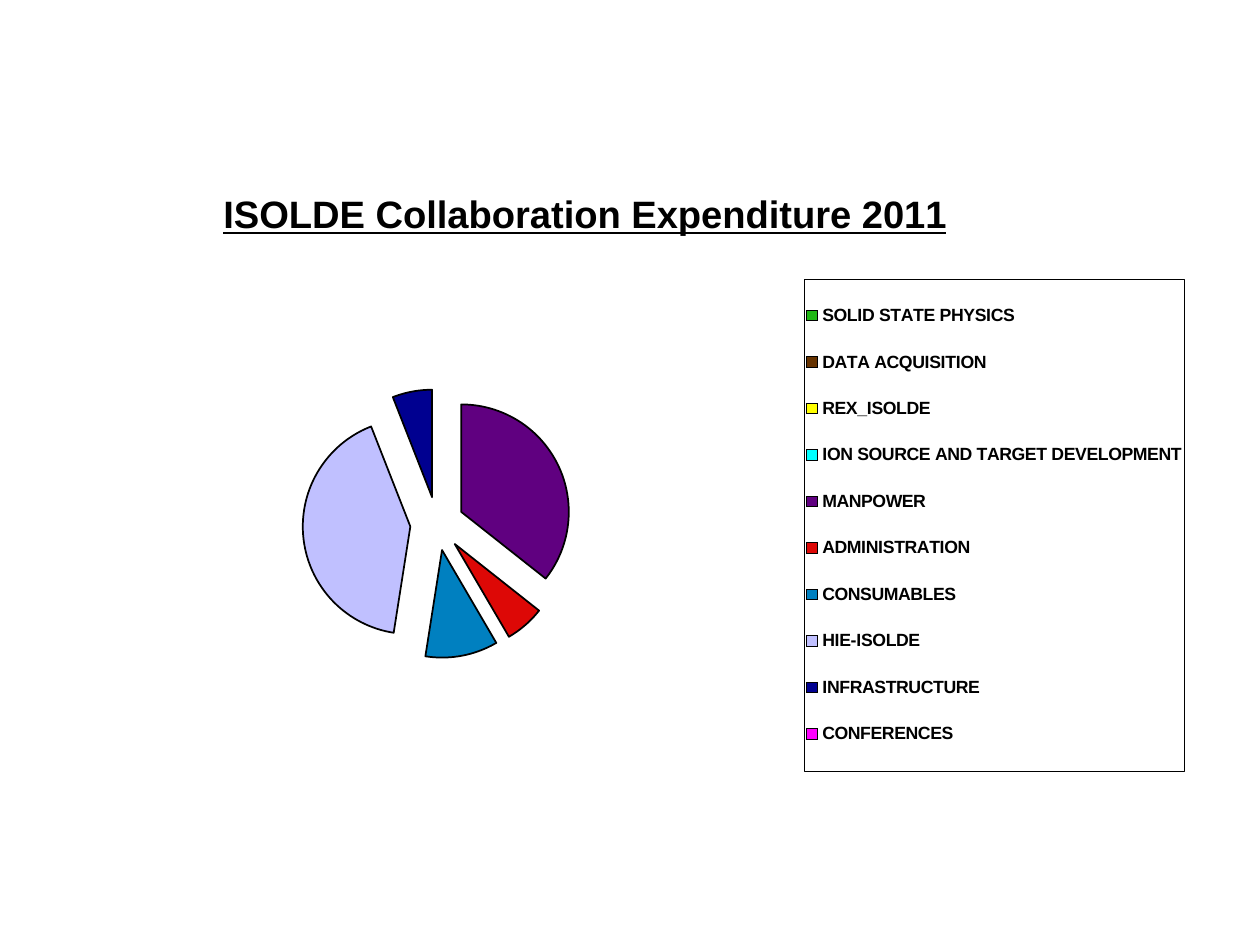
from typing import NamedTuple

from lxml import etree
from pptx import Presentation
from pptx import util as u
from pptx.chart.data import CategoryChartData
from pptx.dml.color import RGBColor
from pptx.enum import chart as charts
from pptx.oxml.ns import qn


class Expense(NamedTuple):
    category: str
    share: float
    color: str


class Frame(NamedTuple):
    x: float
    y: float
    w: float = 0
    h: float = 0


COLORS = {
    "ink": "000000", "green": "1FB714", "brown": "663300", "yellow": "FFFF00",
    "cyan": "00FFFF", "purple": "600080", "red": "DD0806", "blue": "0080C0",
    "lavender": "C0C0FF", "navy": "000090", "magenta": "FF00FF",
}

EXPENSES = [
    Expense("SOLID STATE PHYSICS", 0, "green"),
    Expense("DATA ACQUISITION", 0, "brown"),
    Expense("REX_ISOLDE", 0, "yellow"),
    Expense("ION SOURCE AND TARGET DEVELOPMENT", 0, "cyan"),
    Expense("MANPOWER", 36, "purple"),
    Expense("ADMINISTRATION", 6, "red"),
    Expense("CONSUMABLES", 11, "blue"),
    Expense("HIE-ISOLDE", 42, "lavender"),
    Expense("INFRASTRUCTURE", 6, "navy"),
    Expense("CONFERENCES", 0, "magenta"),
]


def rgb(color: str) -> RGBColor:
    return RGBColor.from_string(COLORS[color])


def set_font(font, **values) -> None:
    for attribute, value in {"name": "Arial", **values}.items():
        setattr(font, attribute, value)
    font.color.rgb = rgb("ink")


def set_line(line, width: float) -> None:
    line.color.rgb = rgb("ink")
    line.width = u.Pt(width)


def place(part, frame: Frame, index: int, inner: bool = False) -> None:
    for automatic in part.findall(qn("c:layout")):
        part.remove(automatic)
    layout = etree.Element(qn("c:layout"))
    manual = etree.SubElement(layout, qn("c:manualLayout"))
    settings = {"layoutTarget": "inner"} if inner else {}
    settings.update(xMode="edge", yMode="edge")
    settings.update({side: str(size) for side, size in frame._asdict().items() if size})
    for tag, value in settings.items():
        etree.SubElement(manual, qn(f"c:{tag}")).set("val", value)
    part.insert(index, layout)


def add_expenditure_chart(slide):
    spending = CategoryChartData()
    spending.categories = [expense.category for expense in EXPENSES]
    spending.add_series("Series 1", [expense.share for expense in EXPENSES])
    area = [u.Pt(length) for length in (22.3, 40.3, 676, 460)]
    chart = slide.shapes.add_chart(
        charts.XL_CHART_TYPE.PIE_EXPLODED, *area, spending).chart
    set_font(chart.font, size=u.Pt(10))
    return chart


def color_slices(chart) -> None:
    pie = chart.plots[0]
    pie.vary_by_categories = True
    for index, expense in enumerate(EXPENSES):
        portion = pie.series[0].points[index].format
        portion.fill.solid()
        portion.fill.fore_color.rgb = rgb(expense.color)
        set_line(portion.line, 1)
    plot_area = chart._chartSpace.chart.plotArea
    place(plot_area, Frame(0.05, 0.396, 0.573, 0.334), 0, inner=True)


def add_title(chart) -> None:
    chart.has_title = True
    heading = chart.chart_title.text_frame.paragraphs[0].add_run()
    heading.text = "ISOLDE Collaboration Expenditure 2011"
    set_font(heading.font, size=u.Pt(21.8), bold=True, underline=True)
    place(chart.chart_title._element, Frame(0.15, 0.14), 1)


def add_legend(chart) -> None:
    chart.has_legend = True
    legend = chart.legend
    legend.position = charts.XL_LEGEND_POSITION.RIGHT
    legend.include_in_layout = False
    set_font(legend.font, size=u.Pt(10.1), bold=True)
    place(legend._element, Frame(0.647, 0.259, 0.321, 0.611), 1)
    border = etree.Element(qn("c:spPr"))
    outline = etree.SubElement(border, qn("a:ln"), w=str(u.Pt(0.25)))
    fill = etree.SubElement(outline, qn("a:solidFill"))
    etree.SubElement(fill, qn("a:srgbClr"), val=COLORS["ink"])
    legend._element.find(qn("c:txPr")).addprevious(border)


def main() -> None:
    deck = Presentation()
    deck.slide_width, deck.slide_height = u.Pt(720), u.Pt(540)
    slide = deck.slides.add_slide(deck.slide_layouts[6])
    chart = add_expenditure_chart(slide)
    color_slices(chart)
    add_title(chart)
    add_legend(chart)
    deck.save("out.pptx")


if __name__ == "__main__":
    main()
